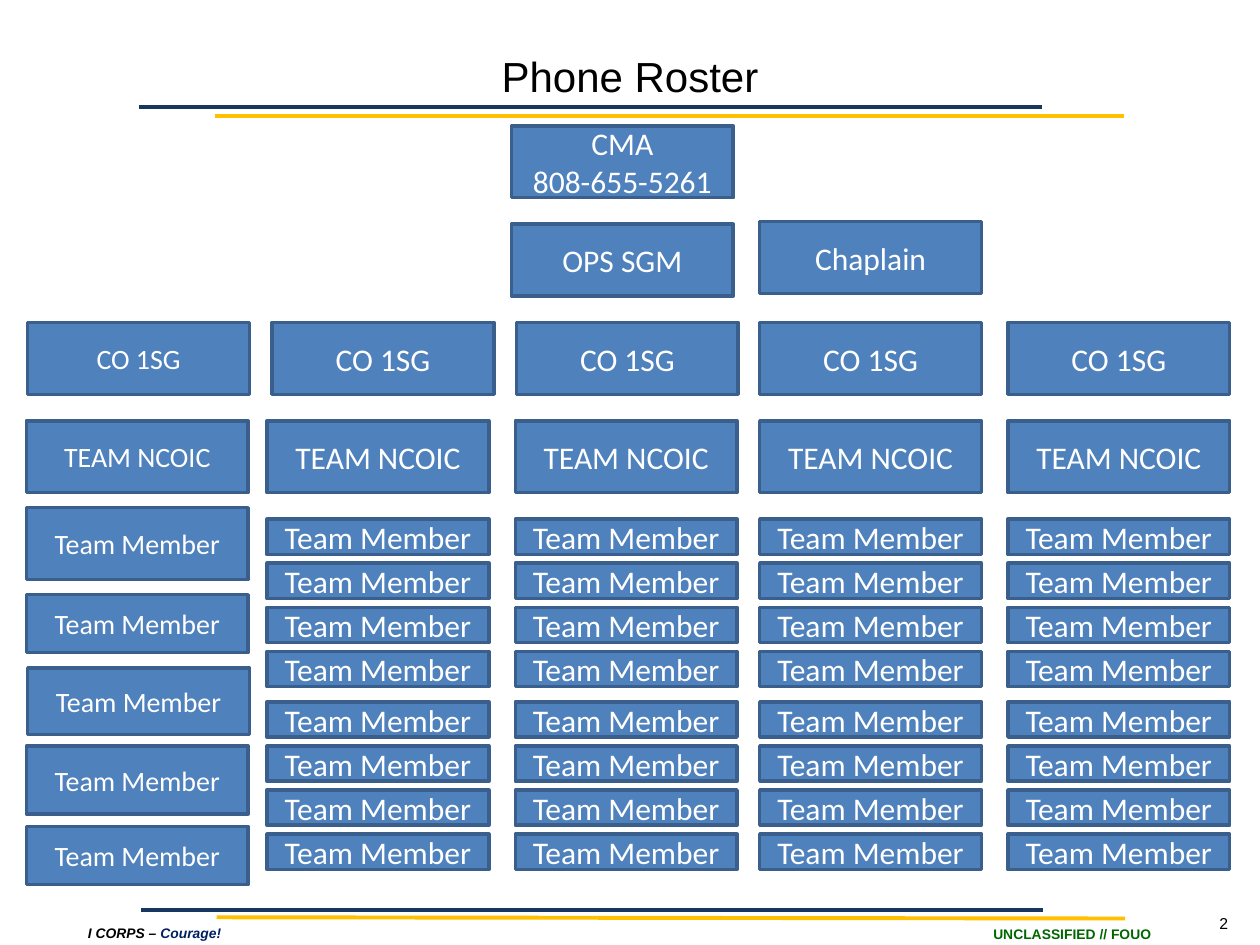
from lxml import etree
from pptx import Presentation
from pptx.dml.color import RGBColor
from pptx.enum.shapes import MSO_CONNECTOR, MSO_SHAPE
from pptx.enum.text import MSO_ANCHOR, PP_ALIGN
from pptx.oxml.ns import qn
from pptx.util import Inches, Pt

STRAIGHT = MSO_CONNECTOR.STRAIGHT
RECTANGLE = MSO_SHAPE.RECTANGLE
TOP, MIDDLE, BOTTOM = MSO_ANCHOR.TOP, MSO_ANCHOR.MIDDLE, MSO_ANCHOR.BOTTOM
LEFT, CENTER = PP_ALIGN.LEFT, PP_ALIGN.CENTER

NAVY, GOLD = "17375E", "FFC000"
BOX_WIDTH, BOX_HEIGHT, MEMBER_HEIGHT = 1.76, 0.57, 0.28
OPS_TOP, CHAPLAIN_TOP, FIRST_SERGEANT_TOP, NCOIC_TOP = 1.78, 1.76, 2.56, 3.34
FIRST_COLUMN_LEFT = 0.21
COLUMN_LEFTS = [2.12, 4.09, 6.03, 8]
FIRST_SERGEANT_LEFTS = [2.16, 4.1, 6.03, 8]
MEMBER_TOPS = [start + row * 0.35 for start in (4.12, 5.57) for row in range(4)]
FIRST_COLUMN_MEMBERS = [(0.21, 4.03, 0.57), (0.21, 4.72, 0.46), (0.22, 5.3, 0.53),
                        (0.21, 5.92, 0.54), (0.21, 6.56, 0.46)]


def color(value):
    return RGBColor.from_string(value)


class RosterSlide:
    heading_font = "Arial"
    box_font = "Calibri"
    box_fill = "4F81BD"
    box_border = "3A5F8C"

    def __init__(self, slide):
        self.slide = slide

    def run(self, paragraph, text, size, font, shade, bold=False, italic=False):
        run = paragraph.add_run()
        run.text = text
        run.font.size = Pt(size)
        run.font.name = font
        run.font.color.rgb = color(shade)
        run.font.bold = bold
        run.font.italic = italic

    def title(self, text, left, top, width, height):
        title = self.slide.shapes.title
        title.left, title.top = Inches(left), Inches(top)
        title.width, title.height = Inches(width), Inches(height)
        title.text_frame.vertical_anchor = BOTTOM
        paragraph = title.text_frame.paragraphs[0]
        paragraph.alignment = CENTER
        self.run(paragraph, text, 24, self.heading_font, "000000")

    def rule(self, start_x, start_y, end_x, end_y, shade):
        rule = self.slide.shapes.add_connector(
            STRAIGHT, Inches(start_x), Inches(start_y), Inches(end_x), Inches(end_y))
        rule.line.color.rgb = color(shade)
        rule.line.width = Pt(2.25)
        etree.SubElement(rule._element.spPr, qn("a:effectLst"))

    def label(self, runs, left, top, width, height, size,
              align=LEFT, anchor=TOP, padding=0.05, bold=True, italic=False):
        label = self.slide.shapes.add_textbox(
            Inches(left), Inches(top), Inches(width), Inches(height))
        frame = label.text_frame
        frame.word_wrap = True
        frame.vertical_anchor = anchor
        frame.margin_top = frame.margin_bottom = Inches(padding)
        paragraph = frame.paragraphs[0]
        paragraph.alignment = align
        for text, shade in runs:
            self.run(paragraph, text, size, self.heading_font, shade, bold, italic)

    def box(self, lines, left, top, height=BOX_HEIGHT, size=18):
        box = self.slide.shapes.add_shape(
            RECTANGLE, Inches(left), Inches(top), Inches(BOX_WIDTH), Inches(height))
        box.shadow.inherit = False
        box.fill.solid()
        box.fill.fore_color.rgb = color(self.box_fill)
        box.line.color.rgb = color(self.box_border)
        box.line.width = Pt(2)
        frame = box.text_frame
        frame.word_wrap = True
        frame.vertical_anchor = MIDDLE
        for index, text in enumerate(lines):
            paragraph = frame.add_paragraph() if index else frame.paragraphs[0]
            paragraph.alignment = CENTER
            self.run(paragraph, text, size, self.box_font, "FFFFFF")


def main():
    deck = Presentation()
    deck.slide_width, deck.slide_height = Inches(10), Inches(7.5)
    roster = RosterSlide(deck.slides.add_slide(deck.slide_layouts[5]))

    roster.rule(1.12, 7.22, 8.28, 7.22, NAVY)
    roster.rule(1.72, 7.28, 8.93, 7.29, GOLD)
    roster.rule(1.1, 0.85, 8.27, 0.85, NAVY)
    roster.rule(1.71, 0.92, 8.92, 0.92, GOLD)

    roster.label([("UNCLASSIFIED // FOUO", "006600")], 7.51, 7.35, 2, 0.13, 7.9,
                 align=CENTER, anchor=MIDDLE, padding=0)
    roster.label([("I CORPS – ", "000000"), ("Courage!", "002060")],
                 0.6, 7.29, 1.87, 0.24, 7.9, italic=True)
    roster.label([("2", "000000")], 9.58, 7.2, 0.42, 0.25, 9, bold=False)
    roster.title("Phone Roster", 0, 0.35, 10, 0.5)

    roster.box(["CMA", "808-655-5261"], 4.06, 1)
    roster.box(["OPS SGM"], 4.06, OPS_TOP)
    roster.box(["Chaplain"], 6.03, CHAPLAIN_TOP)

    roster.box(["CO 1SG"], 0.22, FIRST_SERGEANT_TOP, size=16)
    roster.box(["TEAM NCOIC"], FIRST_COLUMN_LEFT, NCOIC_TOP, size=16)
    for left, top, height in FIRST_COLUMN_MEMBERS:
        roster.box(["Team Member"], left, top, height, size=16)

    for sergeant_left, left in zip(FIRST_SERGEANT_LEFTS, COLUMN_LEFTS):
        roster.box(["CO 1SG"], sergeant_left, FIRST_SERGEANT_TOP)
        roster.box(["TEAM NCOIC"], left, NCOIC_TOP)
        for top in MEMBER_TOPS:
            roster.box(["Team Member"], left, top, MEMBER_HEIGHT)

    deck.save("out.pptx")


if __name__ == "__main__":
    main()
